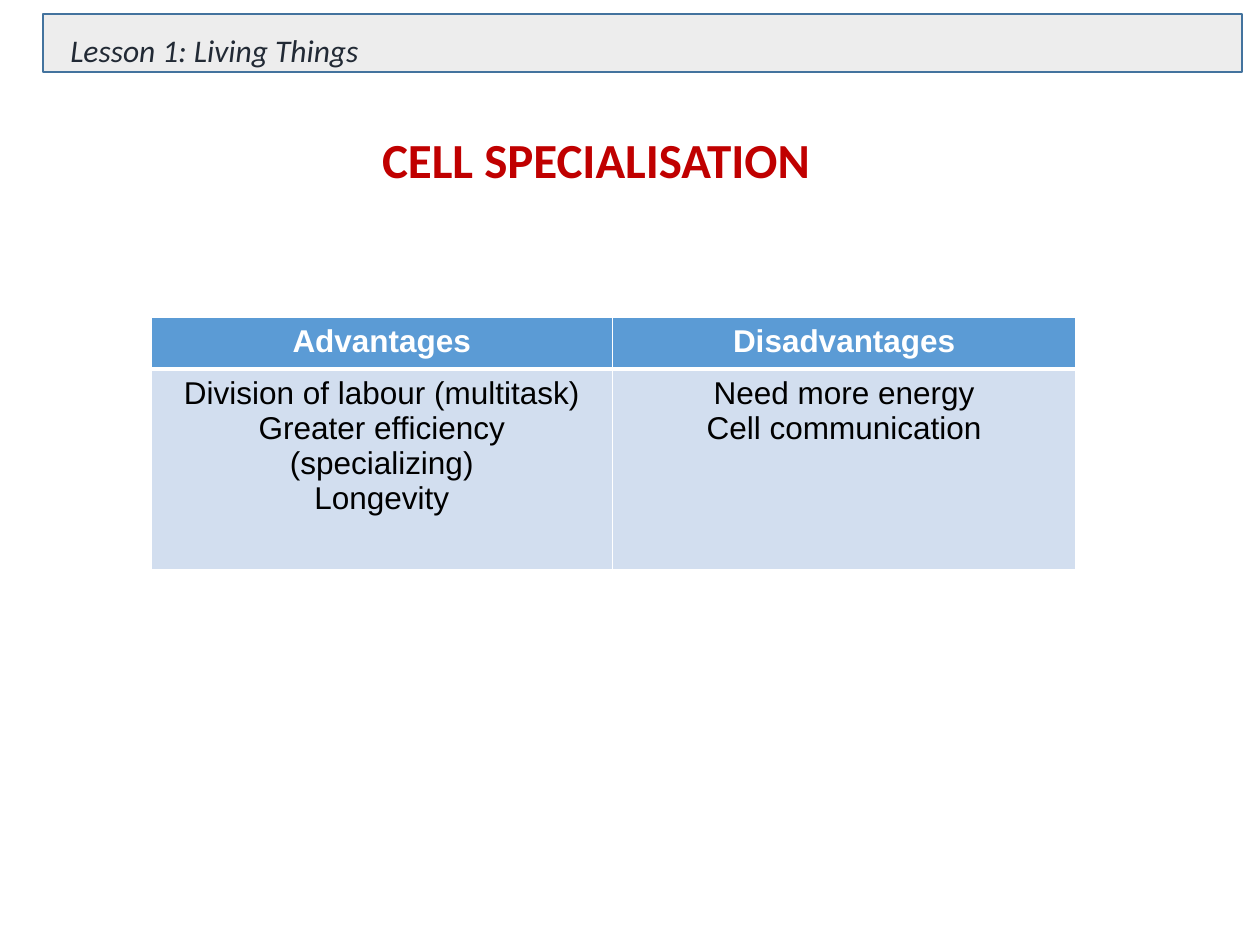
from lxml import etree
from pptx import Presentation
from pptx import util as u
from pptx.dml.color import RGBColor
from pptx.enum import shapes, text
from pptx.oxml import ns

WHITE = "FFFFFF"
COLUMNS = {
    "Advantages": [
        "Division of labour (multitask)",
        "Greater efficiency (specializing)",
        "Longevity",
    ],
    "Disadvantages": ["Need more energy", "Cell communication"],
}


def color(value):
    return RGBColor.from_string(value)


def set_font(para, name, size, fill, bold=False, italic=False):
    font = para.font
    font.name, font.size = name, u.Pt(size)
    font.bold, font.italic = bold, italic
    font.color.rgb = color(fill)


def add_banner(slide):
    banner = slide.shapes.add_shape(
        shapes.MSO_SHAPE.RECTANGLE,
        u.Inches(0.34), u.Inches(0.11), u.Inches(9.52), u.Inches(0.46))
    banner.shadow.inherit = False
    banner.fill.solid()
    banner.fill.fore_color.rgb = color("EDEDED")
    banner.line.color.rgb = color("43739E")
    banner.line.width = u.Pt(1)


def add_lesson_label(slide):
    box = slide.shapes.add_textbox(
        u.Inches(0.46), u.Inches(0.2), u.Inches(2.97), u.Inches(0.4))
    box.text_frame.word_wrap = True
    para = box.text_frame.paragraphs[0]
    para.text = "Lesson 1: Living Things"
    set_font(para, "Calibri", 18, "222A35", italic=True)


def set_title(slide):
    title = slide.shapes.title
    title.left, title.top = u.Inches(2.72), u.Inches(0.98)
    title.width, title.height = u.Inches(4.02), u.Inches(0.57)
    frame = title.text_frame
    frame.text = "CELL SPECIALISATION"
    frame.word_wrap = True
    frame.auto_size = text.MSO_AUTO_SIZE.NONE
    frame.vertical_anchor = text.MSO_ANCHOR.TOP
    para = frame.paragraphs[0]
    para.alignment = text.PP_ALIGN.CENTER
    set_font(para, "Calibri", 28, "C00000", bold=True)


def add_borders(cell, top, bottom):
    """Draw white cell edges; must run before the cell's fill is set."""
    properties = cell._tc.get_or_add_tcPr()
    for side, width in (("L", 1), ("R", 1), ("T", top), ("B", bottom)):
        line = etree.SubElement(
            properties, ns.qn(f"a:ln{side}"), w=str(u.Pt(width)))
        solid = etree.SubElement(line, ns.qn("a:solidFill"))
        etree.SubElement(solid, ns.qn("a:srgbClr"), val=WHITE)


def fill_cell(cell, lines, fill, font_color, bold, top, bottom):
    add_borders(cell, top, bottom)
    cell.fill.solid()
    cell.fill.fore_color.rgb = color(fill)
    cell.text = "\n".join(lines)
    for para in cell.text_frame.paragraphs:
        para.alignment = text.PP_ALIGN.CENTER
        set_font(para, "Arial", 18, font_color, bold=bold)


def add_comparison_table(slide):
    table = slide.shapes.add_table(
        2, len(COLUMNS),
        u.Inches(1.2), u.Inches(2.52), u.Inches(7.34), u.Inches(2)).table
    for column, width in zip(table.columns, (3.66, 3.68)):
        column.width = u.Inches(width)
    for row, height in zip(table.rows, (0.41, 1.59)):
        row.height = u.Inches(height)
    for index, (heading, points) in enumerate(COLUMNS.items()):
        fill_cell(table.cell(0, index), [heading], "5B9BD5", WHITE,
                  bold=True, top=1, bottom=3)
        fill_cell(table.cell(1, index), points, "D2DEEF", "000000",
                  bold=False, top=3, bottom=1)


def main():
    deck = Presentation()
    deck.slide_width, deck.slide_height = u.Inches(10), u.Inches(7.5)
    slide = deck.slides.add_slide(deck.slide_layouts.get_by_name("Title Only"))
    add_banner(slide)
    add_lesson_label(slide)
    set_title(slide)
    add_comparison_table(slide)
    deck.save("out.pptx")


if __name__ == "__main__":
    main()
